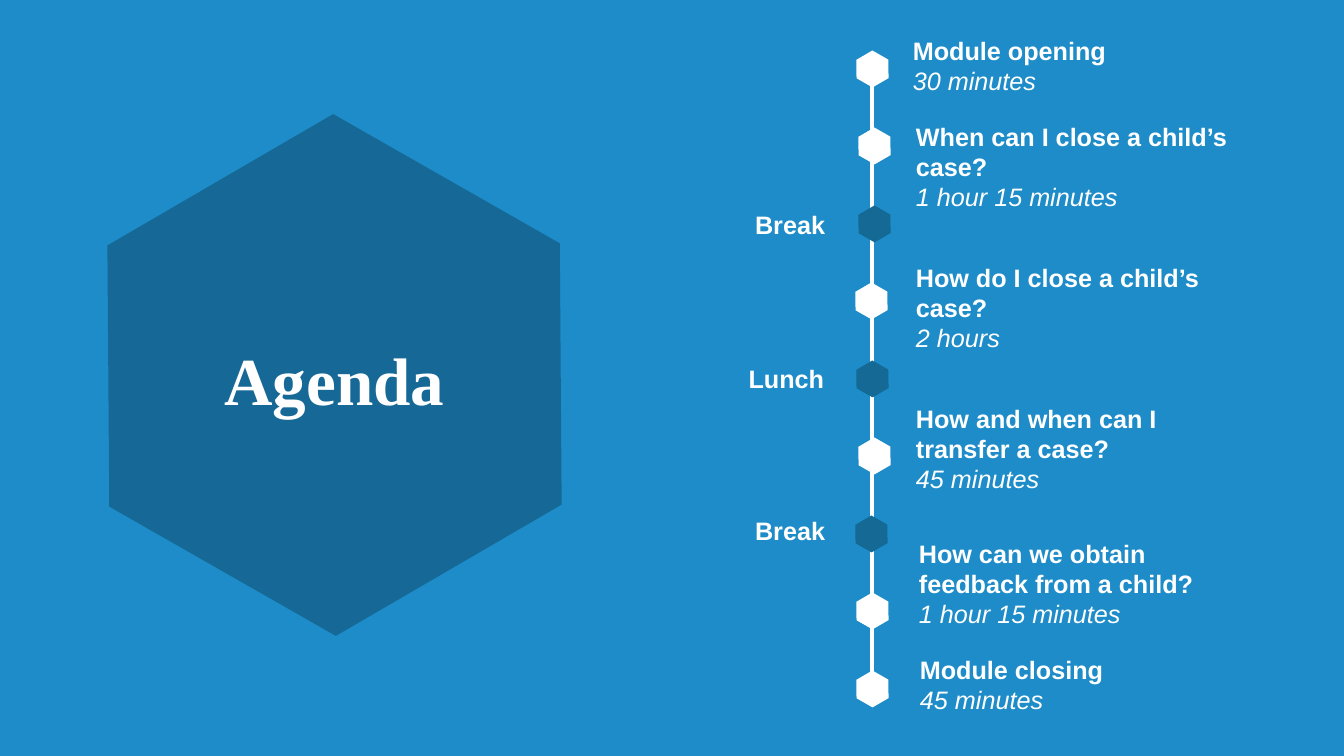
"""Builds an agenda slide with a vertical timeline of hexagon markers."""
from lxml import etree
from pptx import Presentation
from pptx.dml.color import RGBColor
from pptx.enum.shapes import MSO_CONNECTOR, MSO_SHAPE
from pptx.enum.text import MSO_ANCHOR, MSO_AUTO_SIZE, PP_ALIGN
from pptx.oxml.ns import qn
from pptx.util import Emu, Pt

HEXAGON = MSO_SHAPE.HEXAGON
STRAIGHT = MSO_CONNECTOR.STRAIGHT
MIDDLE = MSO_ANCHOR.MIDDLE
NO_FIT, GROW = MSO_AUTO_SIZE.NONE, MSO_AUTO_SIZE.SHAPE_TO_FIT_TEXT
LEFT, CENTER, RIGHT = PP_ALIGN.LEFT, PP_ALIGN.CENTER, PP_ALIGN.RIGHT

SLIDE_W, SLIDE_H = 1344, 756
EMU_PER_PX = 12192000 / SLIDE_W
TITLE_ONLY = 5
BLUE, DEEP_BLUE, MARKER_BLUE, WHITE = "1D8CC8", "166996", "156995", "FFFFFF"

MARKER_TOP, MARKER_SPAN = 53, 620
MARKERS = [
    (854, WHITE), (856, WHITE), (856, MARKER_BLUE),
    (853, WHITE), (854, MARKER_BLUE), (856, WHITE),
    (853, MARKER_BLUE), (854, WHITE), (854, WHITE),
]
SESSIONS = [
    (903, 30, 285, 72, "Module opening", "30 minutes"),
    (906, 116, 362, 102, "When can I close a child’s case?", "1 hour 15 minutes"),
    (906, 257, 362, 102, "How do I close a child’s case?", "2 hours"),
    (906, 398, 356, 102, "How and when can I transfer a case?", "45 minutes"),
    (909, 533, 356, 102, "How can we obtain feedback from a child?", "1 hour 15 minutes"),
    (910, 649, 356, 72, "Module closing", "45 minutes"),
]
PAUSES = [(686, 204, "Break"), (685, 358, "Lunch"), (686, 510, "Break")]


def px(length):
    """Turn pixels into EMU."""
    return Emu(round(length * EMU_PER_PX))


def color(hex_value):
    """Turn a hex string into a colour."""
    return RGBColor.from_string(hex_value)


def style_run(run, font_name, size, bold=False, italic=False):
    """Give a run its white font."""
    run.font.name = font_name
    run.font.size = Pt(size)
    run.font.bold = bold
    run.font.italic = italic
    run.font.color.rgb = color(WHITE)


def add_hexagon(slide, left, top, width, height, fill):
    """Add a plain hexagon turned to stand on its point."""
    hexagon = slide.shapes.add_shape(HEXAGON, px(left), px(top), px(width), px(height))
    hexagon.adjustments[0] = 0.29
    hexagon.rotation = 29.7
    hexagon.shadow.inherit = False
    hexagon.fill.solid()
    hexagon.fill.fore_color.rgb = color(fill)
    hexagon.line.fill.background()
    return hexagon


def add_label(slide, left, top, width, height, heading, duration=None, align=LEFT):
    """Add a bold heading with an optional duration in italics below."""
    label = slide.shapes.add_textbox(px(left), px(top), px(width), px(height))
    frame = label.text_frame
    frame.word_wrap = True
    frame.auto_size = GROW
    frame.text = f"{heading}\n{duration}" if duration else heading
    for index, paragraph in enumerate(frame.paragraphs):
        paragraph.alignment = align
        style_run(paragraph.runs[0], "Arial", 18, bold=index == 0, italic=index > 0)


def add_timeline(slide):
    """Add the vertical line and its evenly spaced markers."""
    axis = slide.shapes.add_connector(STRAIGHT, px(872), px(62), px(872), px(689))
    axis.line.color.rgb = color(WHITE)
    axis.line.width = Pt(2.25)
    etree.SubElement(axis._element.spPr, qn("a:effectLst"))
    for index, (left, fill) in enumerate(MARKERS):
        top = MARKER_TOP + index * MARKER_SPAN // (len(MARKERS) - 1)
        add_hexagon(slide, left, top, 37, 32, fill)


def set_title(slide, text):
    """Place and format the title over its large hexagon."""
    backdrop = add_hexagon(slide, 73, 149, 523, 452, DEEP_BLUE)
    title = slide.shapes.title
    title._element.addprevious(backdrop._element)
    title.left, title.top, title.width, title.height = px(113), px(353), px(443), px(61)
    frame = title.text_frame
    frame.text = text
    frame.word_wrap = True
    frame.auto_size = NO_FIT
    frame.vertical_anchor = MIDDLE
    paragraph = frame.paragraphs[0]
    paragraph.alignment = CENTER
    paragraph.line_spacing = 0.9
    style_run(paragraph.runs[0], "Times New Roman", 48, bold=True)


def main():
    """Build and save the agenda slide."""
    deck = Presentation()
    deck.slide_width, deck.slide_height = px(SLIDE_W), px(SLIDE_H)
    slide = deck.slides.add_slide(deck.slide_layouts[TITLE_ONLY])
    slide.background.fill.solid()
    slide.background.fill.fore_color.rgb = color(BLUE)
    set_title(slide, "Agenda")
    add_timeline(slide)
    for session in SESSIONS:
        add_label(slide, *session)
    for left, top, name in PAUSES:
        add_label(slide, left, top, 149, 40, name, align=RIGHT)
    deck.save("out.pptx")


if __name__ == "__main__":
    main()
